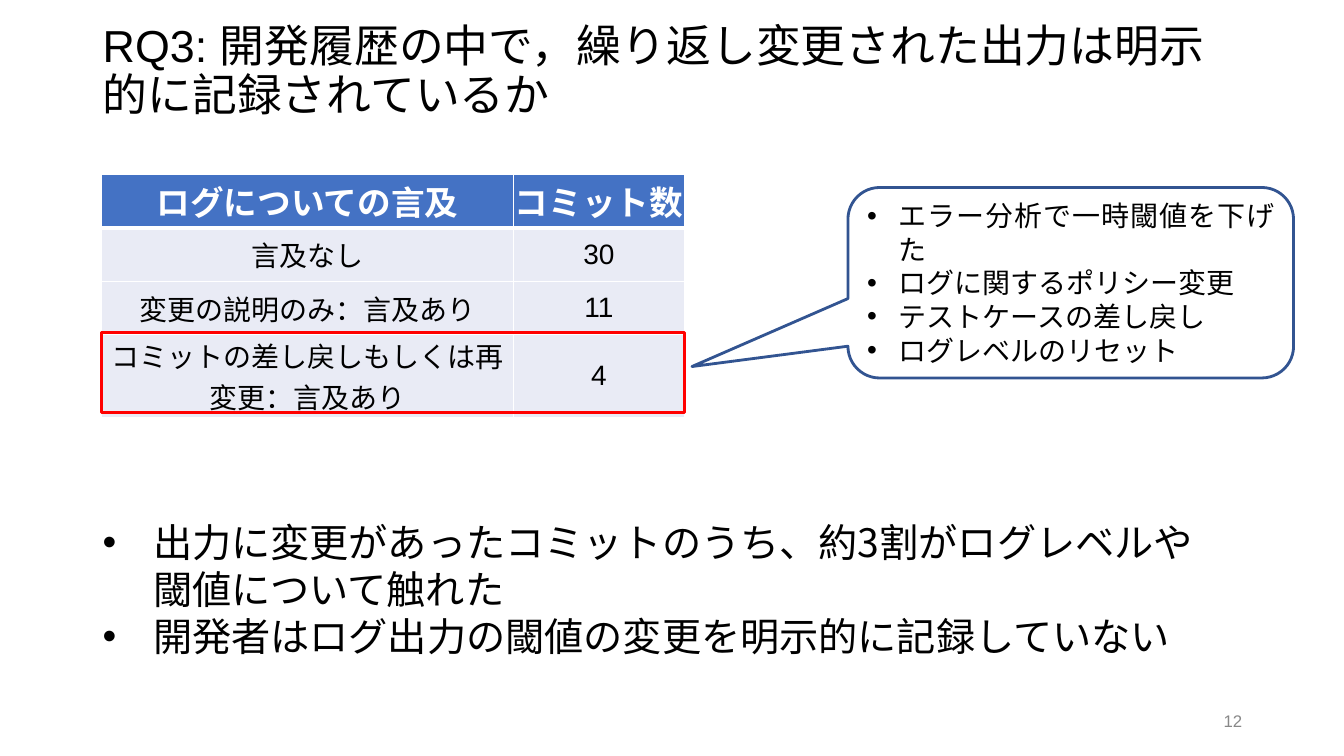
from dataclasses import dataclass

from lxml import etree
from pptx import Presentation
from pptx.dml.color import RGBColor
from pptx.enum.shapes import MSO_SHAPE
from pptx.enum.text import MSO_ANCHOR, PP_ALIGN
from pptx.oxml.ns import qn
from pptx.util import Inches, Pt

RECTANGLE = MSO_SHAPE.RECTANGLE
CALLOUT = MSO_SHAPE.ROUNDED_RECTANGULAR_CALLOUT
MIDDLE = MSO_ANCHOR.MIDDLE
TOP = MSO_ANCHOR.TOP
LEFT, CENTER, RIGHT, JUSTIFY = PP_ALIGN.LEFT, PP_ALIGN.CENTER, PP_ALIGN.RIGHT, PP_ALIGN.JUSTIFY


@dataclass(frozen=True)
class Theme:
    black: str = "000000"
    white: str = "FFFFFF"
    gray: str = "888888"
    header: str = "4472C4"
    band: str = "E9EBF5"
    outline: str = "325491"
    highlight: str = "FF0000"
    latin: str = "Arial"
    japanese: str = "Noto Sans CJK JP"
    title_size: int = 32
    finding_size: int = 28
    header_size: int = 24
    body_size: int = 20
    number_size: int = 12


theme = Theme()


def write_text(frame, lines, size, color, align=LEFT, anchor=MIDDLE, font=theme.latin, bold=False, indent=None):
    frame.word_wrap = True
    frame.vertical_anchor = anchor
    for index, line in enumerate(lines):
        paragraph = frame.add_paragraph() if index else frame.paragraphs[0]
        paragraph.alignment = align
        run = paragraph.add_run()
        run.text = line
        run.font.size = Pt(size)
        run.font.bold = bold
        run.font.color.rgb = RGBColor.from_string(color)
        run.font.name = font
        etree.SubElement(run.font._element, qn("a:ea"), typeface=theme.japanese)
        if indent:
            properties = paragraph._p.get_or_add_pPr()
            properties.set("marL", str(Inches(indent)))
            properties.set("indent", str(-Inches(indent)))
            bullet_color = etree.SubElement(properties, qn("a:buClr"))
            etree.SubElement(bullet_color, qn("a:srgbClr"), val=color)
            etree.SubElement(properties, qn("a:buFont"), typeface=theme.latin)
            etree.SubElement(properties, qn("a:buChar"), char="•")


def set_borders(cell, widths):
    properties = cell._tc.get_or_add_tcPr()
    for index, (side, width) in enumerate(widths.items()):
        border = etree.Element(qn(f"a:{side}"), w=str(Pt(width)))
        fill = etree.SubElement(border, qn("a:solidFill"))
        etree.SubElement(fill, qn("a:srgbClr"), val=theme.white)
        properties.insert(index, border)


presentation = Presentation()
presentation.slide_width = Inches(13.33)
presentation.slide_height = Inches(7.5)
slide = presentation.slides.add_slide(presentation.slide_layouts[6])
shapes = slide.shapes

title = shapes.add_textbox(Inches(0.92), Inches(0.14), Inches(11.5), Inches(1.16))
write_text(
    title.text_frame,
    ["RQ3: 開発履歴の中で，繰り返し変更された出力は明示的に記録されているか"],
    theme.title_size,
    theme.black,
)
title.text_frame.paragraphs[0].line_spacing = 0.9

commit_rows = [
    ("ログについての言及", "コミット数"),
    ("言及なし", "30"),
    ("変更の説明のみ：言及あり", "11"),
    ("コミットの差し戻しもしくは再変更：言及あり", "4"),
]
row_heights = [0.53, 0.53, 0.53, 0.82]
table_left, table_top, table_width = 1.01, 1.73, 5.78
table = shapes.add_table(
    len(commit_rows), 2, Inches(table_left), Inches(table_top), Inches(table_width), Inches(sum(row_heights))
).table
table.columns[0].width = Inches(4.08)
table.columns[1].width = Inches(1.7)
for row_index, (values, height) in enumerate(zip(commit_rows, row_heights)):
    table.rows[row_index].height = Inches(height)
    is_header = row_index == 0
    for column_index, value in enumerate(values):
        cell = table.cell(row_index, column_index)
        cell.margin_left = cell.margin_right = cell.margin_top = cell.margin_bottom = 0
        cell.vertical_anchor = MIDDLE
        cell.fill.solid()
        cell.fill.fore_color.rgb = RGBColor.from_string(theme.header if is_header else theme.band)
        write_text(
            cell.text_frame,
            [value],
            theme.header_size if is_header else theme.body_size,
            theme.white if is_header else theme.black,
            CENTER,
            bold=is_header,
        )
        set_borders(
            cell,
            {"lnL": 1, "lnR": 1, "lnT": 3 if row_index == 1 else 1, "lnB": 3 if is_header else 1},
        )

findings = shapes.add_textbox(Inches(0.92), Inches(5.09), Inches(11.23), Inches(1.51))
write_text(
    findings.text_frame,
    [
        "出力に変更があったコミットのうち、約3割がログレベルや閾値について触れた",
        "開発者はログ出力の閾値の変更を明示的に記録していない",
    ],
    theme.finding_size,
    theme.black,
    anchor=TOP,
    font=theme.japanese,
    indent=0.5,
)

slide_number = shapes.add_textbox(Inches(9.42), Inches(6.95), Inches(3), Inches(0.4))
write_text(slide_number.text_frame, ["12"], theme.number_size, theme.gray, RIGHT)

callout = shapes.add_shape(CALLOUT, Inches(8.41), Inches(1.86), Inches(4.42), Inches(1.89))
callout.adjustments[0] = -0.85
callout.adjustments[1] = 0.44
callout.fill.solid()
callout.fill.fore_color.rgb = RGBColor.from_string(theme.white)
write_text(
    callout.text_frame,
    [
        "エラー分析で一時閾値を下げた",
        "ログに関するポリシー変更",
        "テストケースの差し戻し",
        "ログレベルのリセット",
    ],
    theme.body_size,
    theme.black,
    JUSTIFY,
    indent=0.31,
)

highlight = shapes.add_shape(RECTANGLE, Inches(table_left), Inches(3.3), Inches(table_width), Inches(0.79))
highlight.fill.background()
for shape, color in ((callout, theme.outline), (highlight, theme.highlight)):
    shape.shadow.inherit = False
    shape.line.color.rgb = RGBColor.from_string(color)
    shape.line.width = Pt(2)

presentation.save("out.pptx")
